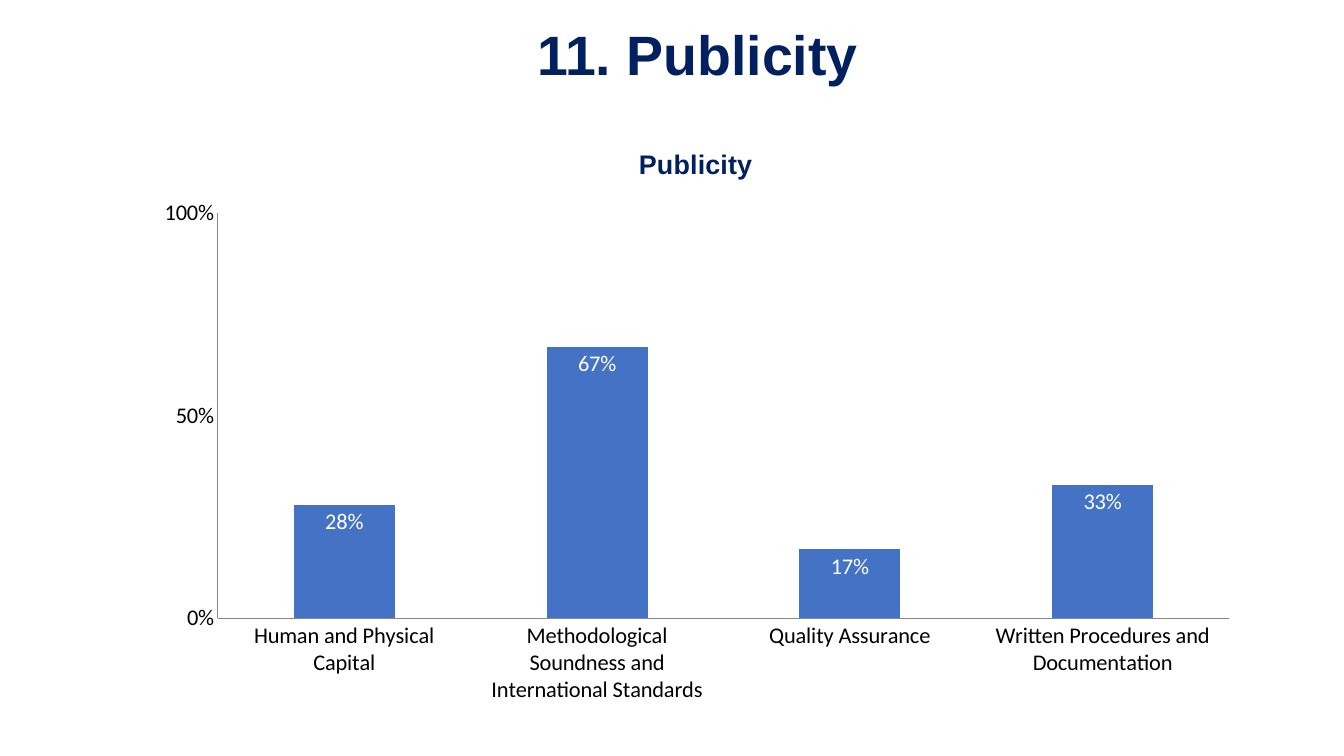
import pptx
import pptx.util
import pptx.chart.data
import pptx.dml.color
import pptx.enum.chart
import pptx.enum.text
import pptx.oxml

NAVY = pptx.dml.color.RGBColor(0x00, 0x20, 0x60)
BLUE = pptx.dml.color.RGBColor(0x44, 0x72, 0xC4)
GRAY = pptx.dml.color.RGBColor(0x87, 0x87, 0x87)
BLACK = pptx.dml.color.RGBColor(0x00, 0x00, 0x00)
WHITE = pptx.dml.color.RGBColor(0xFF, 0xFF, 0xFF)

PUBLICITY = {
    "Human and Physical Capital": 0.28,
    "Methodological Soundness and International Standards": 0.67,
    "Quality Assurance": 0.17,
    "Written Procedures and Documentation": 0.33,
}
PLOT_AREA = {"x": 0.07, "y": 0.15, "w": 0.91, "h": 0.68}


def format_font(font, color, **values):
    font.color.rgb = color
    for name, value in values.items():
        setattr(font, name, value)


deck = pptx.Presentation()
deck.slide_width = pptx.util.Inches(13.33)
deck.slide_height = pptx.util.Inches(7.5)
page = deck.slides.add_slide(deck.slide_layouts[5])

title = page.shapes.title
title_place = {"left": 1.67, "top": 0.16, "width": 10.5, "height": 0.82}
for name, value in title_place.items():
    setattr(title, name, pptx.util.Inches(value))
frame = title.text_frame
frame.text = "11. Publicity"
frame.vertical_anchor = pptx.enum.text.MSO_ANCHOR.MIDDLE
frame.auto_size = pptx.enum.text.MSO_AUTO_SIZE.NONE
para = frame.paragraphs[0]
para.alignment = pptx.enum.text.PP_ALIGN.CENTER
para.line_spacing = 0.9
format_font(para.runs[0].font, NAVY, name="Arial", size=pptx.util.Pt(39.6), bold=True)

data = pptx.chart.data.CategoryChartData(number_format="0%")
data.categories = PUBLICITY.keys()
data.add_series("Series 1", PUBLICITY.values())
chart_place = [pptx.util.Inches(value) for value in (1.39, 1.23, 11.02, 5.91)]
chart = page.shapes.add_chart(
    pptx.enum.chart.XL_CHART_TYPE.COLUMN_CLUSTERED, *chart_place, data
).chart
format_font(chart.font, BLACK, name="Calibri", size=pptx.util.Pt(16))
chart.has_legend = False

chart.has_title = True
heading = chart.chart_title.text_frame
heading.text = "Publicity"
format_font(
    heading.paragraphs[0].runs[0].font, NAVY,
    name="Arial", size=pptx.util.Pt(19.2), bold=True,
)
chart.chart_title.include_in_layout = False

for axis in (chart.category_axis, chart.value_axis):
    axis.has_major_gridlines = False
    axis.major_tick_mark = pptx.enum.chart.XL_TICK_MARK.NONE
    axis.minor_tick_mark = pptx.enum.chart.XL_TICK_MARK.NONE
    axis.format.line.color.rgb = GRAY
    axis.format.line.width = pptx.util.Pt(0.75)

scale = {"minimum_scale": 0, "maximum_scale": 1, "major_unit": 0.5}
for name, value in scale.items():
    setattr(chart.value_axis, name, value)

plot = chart.plots[0]
plot.gap_width = 150
plot.vary_by_categories = False
columns = plot.series[0]
columns.format.fill.solid()
columns.format.fill.fore_color.rgb = BLUE

labels = columns.data_labels
label_format = {
    "show_value": True,
    "position": pptx.enum.chart.XL_LABEL_POSITION.INSIDE_END,
    "number_format": "0%",
    "number_format_is_linked": False,
}
for name, value in label_format.items():
    setattr(labels, name, value)
format_font(labels.font, WHITE, name="Calibri", size=pptx.util.Pt(16))
for axis in (chart.value_axis,):
    axis.tick_labels.number_format = "0%"
    axis.tick_labels.number_format_is_linked = False

plot_area = chart.element.find(".//" + pptx.oxml.ns.qn("c:plotArea"))
for old_layout in plot_area.findall(pptx.oxml.ns.qn("c:layout")):
    plot_area.remove(old_layout)
modes = '<c:layoutTarget val="inner"/><c:xMode val="edge"/><c:yMode val="edge"/>'
shares = "".join(f'<c:{name} val="{share}"/>' for name, share in PLOT_AREA.items())
plot_area.insert(0, pptx.oxml.parse_xml(
    f"<c:layout {pptx.oxml.ns.nsdecls('c')}>"
    f"<c:manualLayout>{modes}{shares}</c:manualLayout></c:layout>"
))

deck.save("out.pptx")
